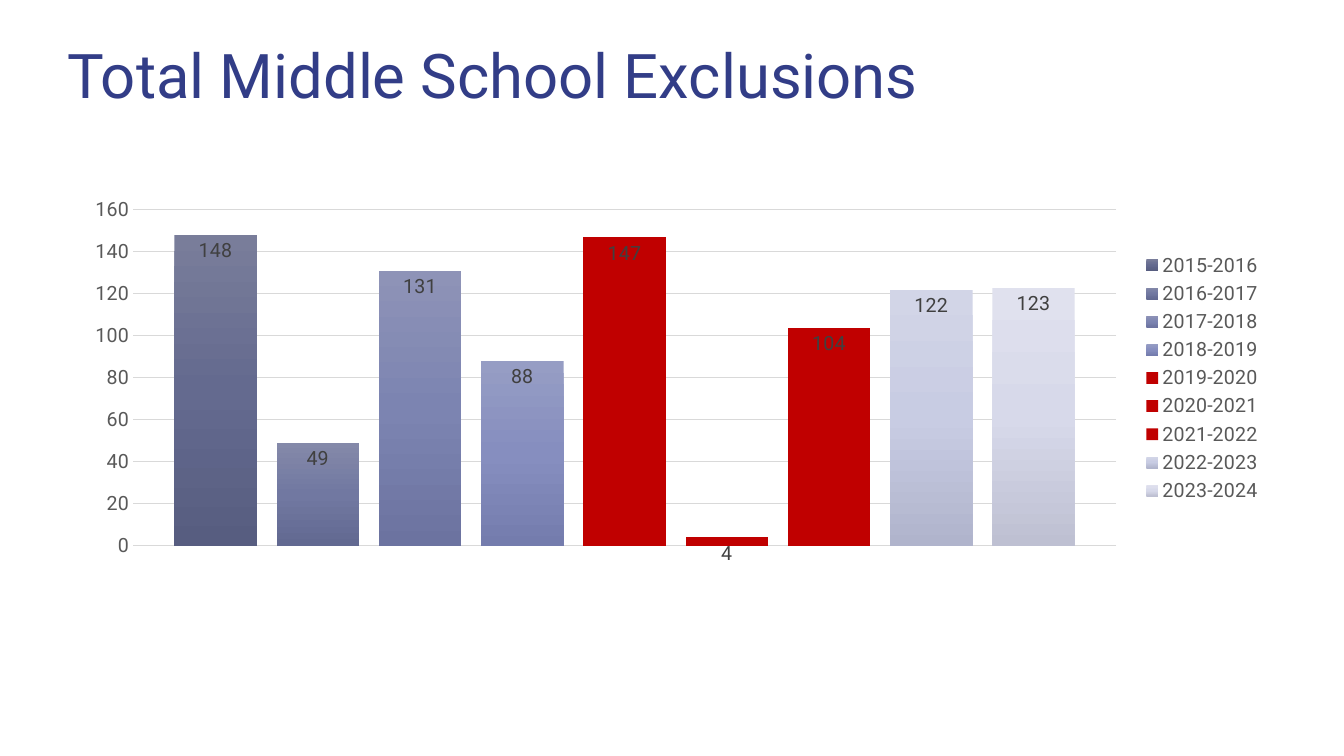
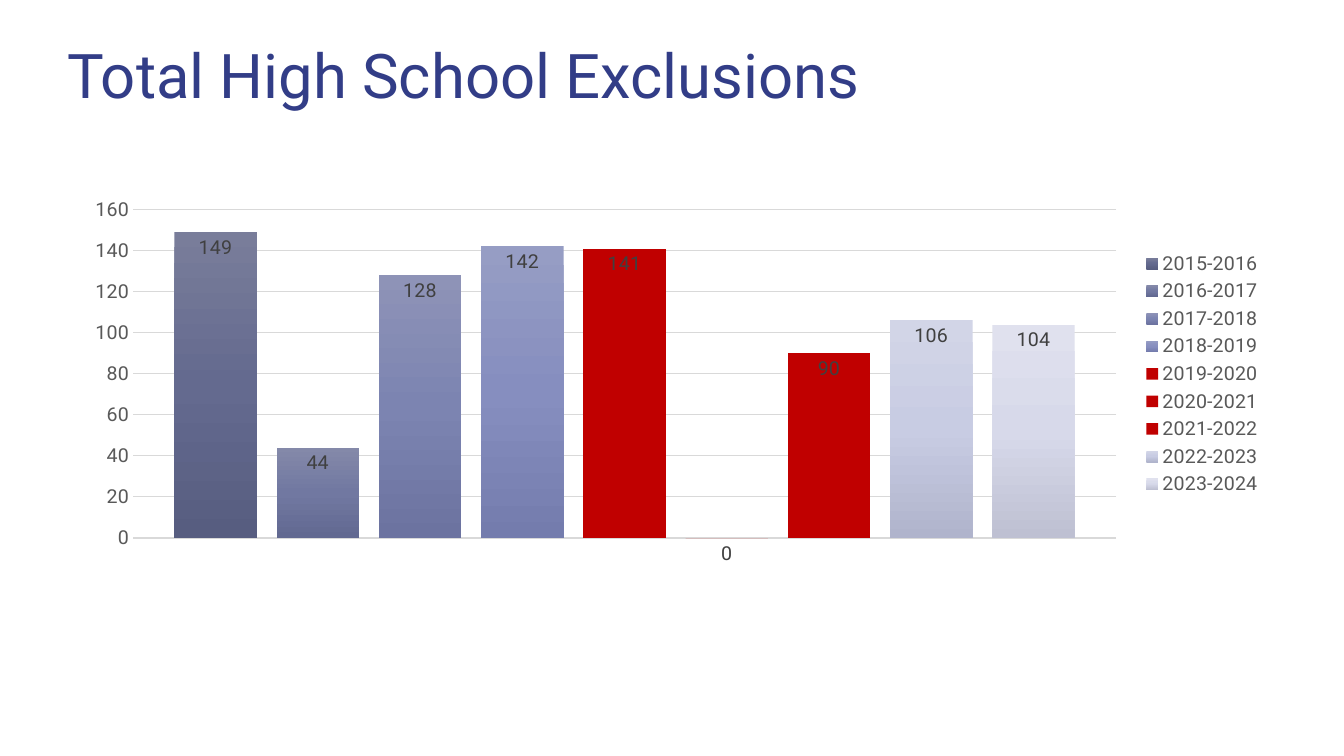
"""Build two slides charting school exclusions by year."""
from copy import deepcopy

from pptx import Presentation
from pptx import util as u
from pptx.chart.data import CategoryChartData
from pptx.dml.color import RGBColor
from pptx.enum import chart as charts
from pptx.enum import text
from pptx.oxml.ns import qn

COLORS = {"title": "323D87", "text": "000000", "axis": "595959",
          "label": "404040", "grid": "D9D9D9", "red": "C00000"}
FONT = "Roboto"
YEARS = [
    ("2015-2016", ("797D9A", "646A8F", "575D80")),
    ("2016-2017", ("8489A9", "7178A1", "626991")),
    ("2017-2018", ("8E93B7", "7C84B1", "6C73A0")),
    ("2018-2019", ("969DC4", "868EBF", "747CAD")),
    ("2019-2020", (COLORS["red"],)),
    ("2020-2021", (COLORS["red"],)),
    ("2021-2022", (COLORS["red"],)),
    ("2022-2023", ("D2D5E7", "C8CCE3", "B0B4CC")),
    ("2023-2024", ("E0E1EE", "D7D9EA", "BEC0D2")),
]
SLIDES = [
    ("Total Middle School Exclusions", (148, 49, 131, 88, 147, 4, 104, 122, 123)),
    ("Total High School Exclusions", (149, 44, 128, 142, 141, 0, 90, 106, 104)),
]
TITLE_BOX = dict(left=u.Pt(48), top=u.Pt(28.8), width=u.Pt(898), height=u.Pt(54.8))
CHART_BOX = (u.Pt(51), u.Pt(136), u.Pt(858), u.Pt(268))
TITLE_FRAME = dict(margin_left=0, margin_right=0, margin_top=0, margin_bottom=0,
                   word_wrap=True, auto_size=text.MSO_AUTO_SIZE.NONE,
                   vertical_anchor=text.MSO_ANCHOR.MIDDLE)
TITLE_PARA = dict(alignment=text.PP_ALIGN.LEFT, line_spacing=0.9)
VALUE_AXIS = dict(minimum_scale=0, maximum_scale=160, major_unit=20,
                  major_tick_mark=charts.XL_TICK_MARK.NONE,
                  minor_tick_mark=charts.XL_TICK_MARK.NONE,
                  has_major_gridlines=True)
LEGEND = dict(position=charts.XL_LEGEND_POSITION.RIGHT, include_in_layout=False)
LABELS = dict(show_value=True, position=charts.XL_LABEL_POSITION.INSIDE_END)
PLOT = dict(gap_width=100, overlap=-24, vary_by_categories=False)


def apply(target, formats):
    for name, value in formats.items():
        setattr(target, name, value)


def set_font(font, color, size=14):
    apply(font, dict(name=FONT, size=u.Pt(size), bold=False))
    font.color.rgb = RGBColor.from_string(COLORS[color])


def fill_series(series, shades):
    fill = series.format.fill
    if len(shades) == 1:
        fill.solid()
        fill.fore_color.rgb = RGBColor.from_string(shades[0])
        return
    fill.gradient()
    fill.gradient_angle = 270
    stop_list = next(series._element.iter(qn("a:gsLst")))
    stop_list.append(deepcopy(stop_list[0]))
    for index, (stop, shade) in enumerate(zip(fill.gradient_stops, shades)):
        stop.position = index / (len(shades) - 1)
        stop.color.rgb = RGBColor.from_string(shade)


def add_title(page, words):
    title = page.shapes.title
    title.text = words
    apply(title, TITLE_BOX)
    apply(title.text_frame, TITLE_FRAME)
    para = title.text_frame.paragraphs[0]
    apply(para, TITLE_PARA)
    set_font(para.runs[0].font, "title", 44)


def add_columns(page, values):
    data = CategoryChartData()
    data.categories = ["1"]
    for (year, _), value in zip(YEARS, values):
        data.add_series(year, [value])
    chart = page.shapes.add_chart(
        charts.XL_CHART_TYPE.COLUMN_CLUSTERED, *CHART_BOX, data).chart
    apply(chart, dict(has_title=False, has_legend=True))
    set_font(chart.font, "text")
    apply(chart.legend, LEGEND)
    set_font(chart.legend.font, "axis")

    chart.category_axis.visible = False
    axis = chart.value_axis
    apply(axis, VALUE_AXIS)
    set_font(axis.tick_labels.font, "axis")
    axis.format.line.fill.background()
    grid = axis.major_gridlines.format.line
    grid.width = u.Pt(0.75)
    grid.color.rgb = RGBColor.from_string(COLORS["grid"])

    plot = chart.plots[0]
    apply(plot, PLOT)
    for series, (_, shades) in zip(plot.series, YEARS):
        series.invert_if_negative = False
        fill_series(series, shades)
        apply(series.data_labels, LABELS)
        set_font(series.data_labels.font, "label")


def main():
    deck = Presentation()
    apply(deck, dict(slide_width=u.Pt(960), slide_height=u.Pt(540)))
    for words, values in SLIDES:
        page = deck.slides.add_slide(deck.slide_layouts.get_by_name("Title Only"))
        add_title(page, words)
        add_columns(page, values)
    deck.save("out.pptx")


if __name__ == "__main__":
    main()
